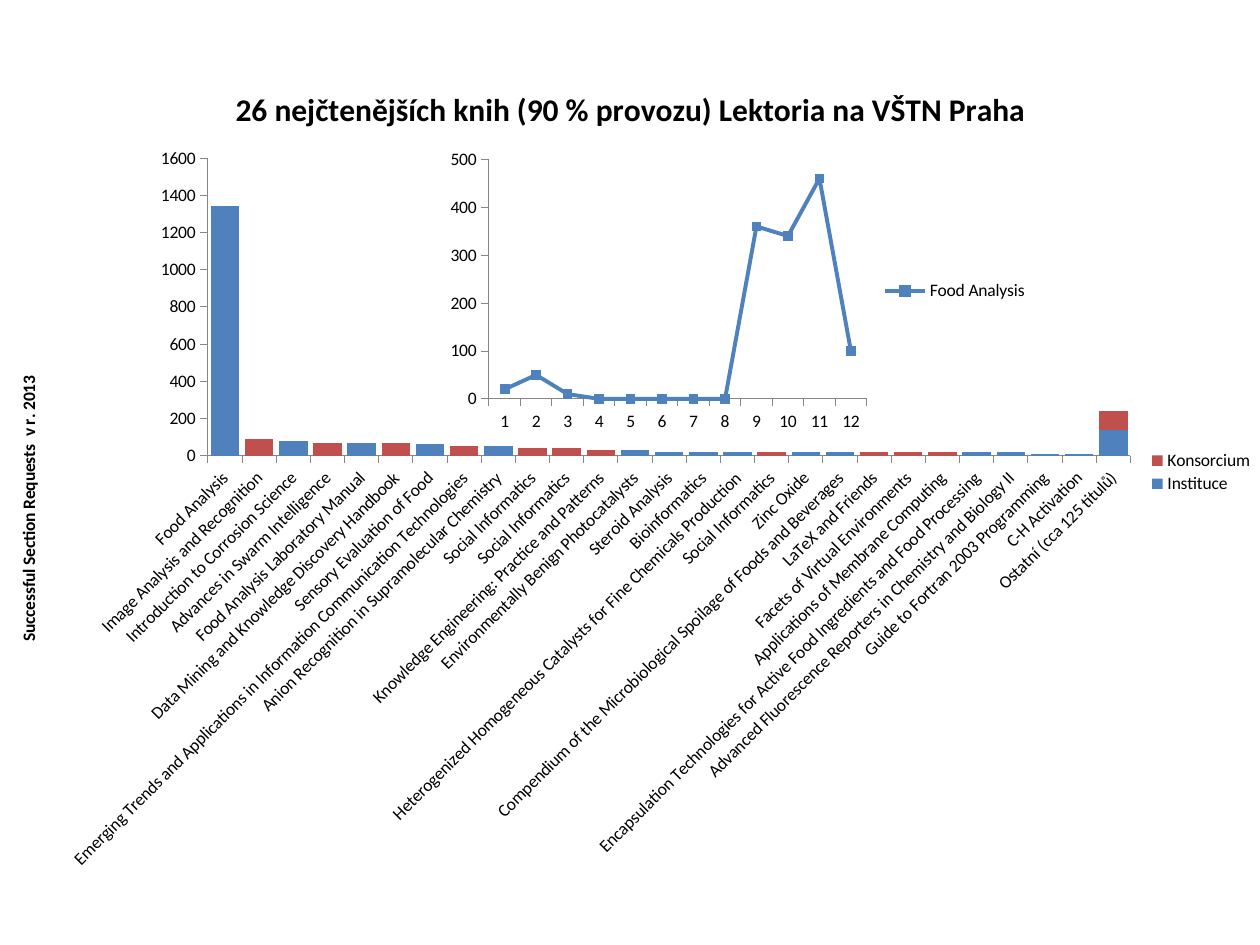
from lxml import etree
from pptx import Presentation, util as u
from pptx.chart.data import CategoryChartData
from pptx.dml.color import RGBColor
from pptx.enum import chart as ch
from pptx.oxml.ns import qn

THEME = {
    "font": "Calibri", "text": "000000", "axis": "868686",
    "blue": "4F81BD", "red": "C0504D", "title": 18, "body": 10,
}

TITLE = "26 nejčtenějších knih (90 % provozu) Lektoria na VŠTN Praha"
AXIS_TITLE = "Successful Section Requests  v r. 2013"

# book, Instituce, Konsorcium
BOOKS = [
    ("Food Analysis", 1340, 0),
    ("Image Analysis and Recognition", 0, 90),
    ("Introduction to Corrosion Science", 80, 0),
    ("Advances in Swarm Intelligence", 0, 70),
    ("Food Analysis Laboratory Manual", 70, 0),
    ("Data Mining and Knowledge Discovery Handbook", 0, 70),
    ("Sensory Evaluation of Food", 60, 0),
    ("Emerging Trends and Applications in Information Communication Technologies", 0, 50),
    ("Anion Recognition in Supramolecular Chemistry", 50, 0),
    ("Social Informatics", 0, 40),
    ("Social Informatics", 0, 40),
    ("Knowledge Engineering: Practice and Patterns", 0, 30),
    ("Environmentally Benign Photocatalysts", 30, 0),
    ("Steroid Analysis", 20, 0),
    ("Bioinformatics", 20, 0),
    ("Heterogenized Homogeneous Catalysts for Fine Chemicals Production", 20, 0),
    ("Social Informatics", 0, 20),
    ("Zinc Oxide", 20, 0),
    ("Compendium of the Microbiological Spoilage of Foods and Beverages", 20, 0),
    ("LaTeX and Friends", 0, 20),
    ("Facets of Virtual Environments", 0, 20),
    ("Applications of Membrane Computing", 0, 20),
    ("Encapsulation Technologies for Active Food Ingredients and Food Processing", 20, 0),
    ("Advanced Fluorescence Reporters in Chemistry and Biology II", 20, 0),
    ("Guide to Fortran 2003 Programming", 10, 0),
    ("C-H Activation", 10, 0),
    ("Ostatní (cca 125 titulů)", 140, 100),
]
MONTHLY = [20, 50, 10, 0, 0, 0, 0, 0, 360, 340, 460, 100]


def rgb(name):
    return RGBColor.from_string(THEME[name])


def place(chart, part, after=None, **frame):
    """Set the manual layout of a chart part, as fractions of the chart size."""
    el = chart.element.find(".//" + qn(part))
    for old in el.findall(qn("c:layout")):
        el.remove(old)
    layout = etree.Element(qn("c:layout"))
    manual = etree.SubElement(layout, qn("c:manualLayout"))
    if part == "c:plotArea":
        etree.SubElement(manual, qn("c:layoutTarget")).set("val", "inner")
    for key in ("x", "y"):
        etree.SubElement(manual, qn(f"c:{key}Mode")).set("val", "edge")
    for key, value in frame.items():
        etree.SubElement(manual, qn(f"c:{key}")).set("val", str(value))
    el.insert(el.index(el.find(qn(after))) + 1 if after else 0, layout)


def set_title(owner, text, size):
    tf = owner.text_frame
    tf.text = text
    f = tf.paragraphs[0].runs[0].font
    f.name, f.size, f.bold = THEME["font"], u.Pt(size), True
    f.color.rgb = rgb("text")


def add_chart(s, kind, cats, series, box, top, step):
    data = CategoryChartData()
    data.categories = cats
    for name, values in series:
        data.add_series(name, values)
    chart = s.shapes.add_chart(kind, *map(u.Cm, box), data).chart
    chart.font.name, chart.font.size = THEME["font"], u.Pt(THEME["body"])
    chart.font.color.rgb = rgb("text")
    chart.has_title = False
    chart.has_legend = True
    chart.legend.position = ch.XL_LEGEND_POSITION.RIGHT
    chart.legend.include_in_layout = False
    chart.plots[0].vary_by_categories = False
    for axis in (chart.category_axis, chart.value_axis):
        axis.has_major_gridlines = False
        axis.major_tick_mark = ch.XL_TICK_MARK.OUTSIDE
        axis.format.line.color.rgb = rgb("axis")
        axis.format.line.width = u.Pt(0.5)
    va = chart.value_axis
    va.minimum_scale, va.maximum_scale, va.major_unit = 0, top, step
    return chart


def add_book_chart(s):
    cats, institute, consortium = zip(*BOOKS)
    chart = add_chart(s, ch.XL_CHART_TYPE.COLUMN_STACKED, cats,
                      [("Instituce", institute), ("Konsorcium", consortium)],
                      (-0.2, 1.19, 25.83, 16.66), 1600, 200)
    plot = chart.plots[0]
    plot.gap_width, plot.overlap = 20, 100
    for ser, colour in zip(plot.series, ("blue", "red")):
        ser.format.fill.solid()
        ser.format.fill.fore_color.rgb = rgb(colour)
    chart.has_title = True
    set_title(chart.chart_title, TITLE, THEME["title"])
    set_title(chart.value_axis.axis_title, AXIS_TITLE, THEME["body"])
    chart.category_axis.tick_labels.font.size = u.Pt(THEME["body"])
    body = chart.element.find(".//" + qn("c:catAx")).find(
        qn("c:txPr")).find(qn("a:bodyPr"))
    body.set("rot", "-2700000")
    body.set("vert", "horz")
    place(chart, "c:plotArea", x=0.17, y=0.12, w=0.72, h=0.36)
    place(chart, "c:legend", "c:legendPos", x=0.9, y=0.47, w=0.09, h=0.06)


def add_monthly_chart(s):
    chart = add_chart(s, ch.XL_CHART_TYPE.LINE_MARKERS,
                      [str(m) for m in range(1, len(MONTHLY) + 1)],
                      [("Food Analysis", MONTHLY)],
                      (8.89, 2.92, 12.09, 5.89), 500, 100)
    ser = chart.plots[0].series[0]
    ser.smooth = False
    ser.format.line.color.rgb = rgb("blue")
    ser.format.line.width = u.Pt(2.25)
    ser.marker.style, ser.marker.size = ch.XL_MARKER_STYLE.SQUARE, 5
    ser.marker.format.fill.solid()
    ser.marker.format.fill.fore_color.rgb = rgb("blue")
    ser.marker.format.line.color.rgb = rgb("blue")
    place(chart, "c:plotArea", x=0.08, y=0.05, w=0.63, h=0.82)


def main():
    prs = Presentation()
    prs.slide_width, prs.slide_height = u.Cm(25.4), u.Cm(19.05)
    s = prs.slides.add_slide(prs.slide_layouts[6])
    add_book_chart(s)
    add_monthly_chart(s)
    prs.save("out.pptx")


if __name__ == "__main__":
    main()
